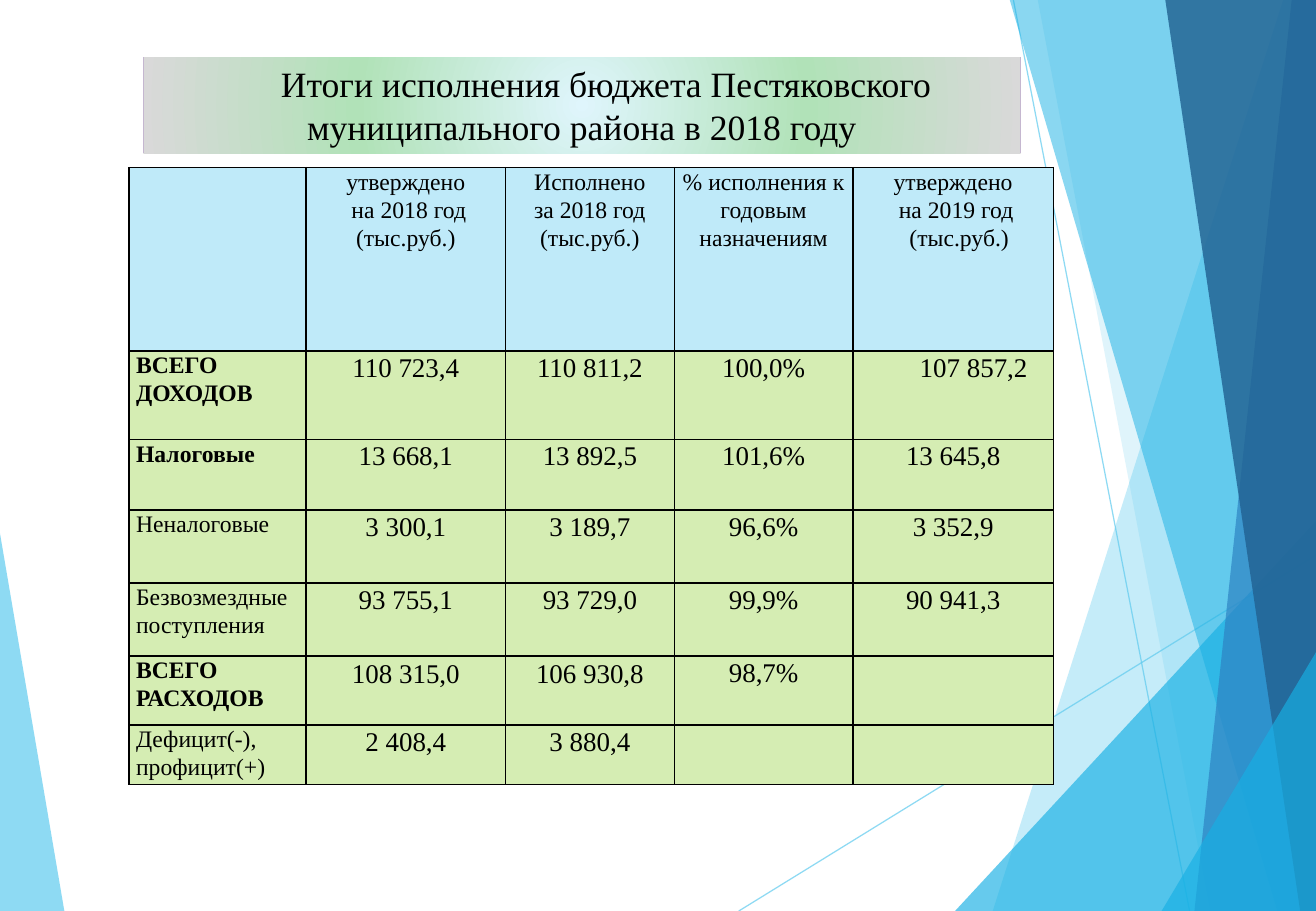
"""Build the slide with the 2018 budget results of the Pestyaki district."""
import pptx
import pptx.dml.color
import pptx.enum.shapes
import pptx.enum.text
import pptx.oxml
import pptx.oxml.ns
import pptx.oxml.xmlchemy
import pptx.util

RGBColor = pptx.dml.color.RGBColor
ALIGN = pptx.enum.text.PP_ALIGN
SKY = RGBColor(0x5F, 0xCB, 0xEF)
AZURE = RGBColor(0x17, 0xB0, 0xE4)
BLUE = RGBColor(0x2E, 0x83, 0xC3)
NAVY = RGBColor(0x22, 0x62, 0x92)
BLACK = RGBColor(0x00, 0x00, 0x00)
HEADER_BLUE = RGBColor(0xBF, 0xEA, 0xF9)
ROW_GREEN = RGBColor(0xD5, 0xED, 0xB3)
TITLE_STOPS = [
    (0, RGBColor(0xDF, 0xF5, 0xFC)),
    (51, RGBColor(0xB1, 0xE2, 0xB8)),
    (100, RGBColor(0xD9, 0xD9, 0xD9)),
    (100, RGBColor(0xC5, 0xEC, 0xFF)),
    (100, RGBColor(0x70, 0x30, 0xA0)),
]
FONT = "Times New Roman"
PX = 9144
WIDTH, HEIGHT = 1083, 750

TITLE = "Итоги исполнения бюджета Пестяковского муниципального района в 2018 году"
TITLE_BOX = (118, 47, 722, 79)
TITLE_INDENT = 40

LEFT_WING = ([(0, 439), (53, HEIGHT), (0, HEIGHT)], SKY, 70)
LINES = [((608, HEIGHT), (WIDTH, 457)), ((834, 0), (979, HEIGHT))]
RIGHT_FACETS = [
    ([(1056, 0), (817, HEIGHT), (WIDTH, HEIGHT), (WIDTH, 0)], SKY, 36),
    ([(854, 0), (996, HEIGHT), (WIDTH, HEIGHT), (WIDTH, 0)], SKY, 20),
    ([(786, HEIGHT), (WIDTH, 429), (WIDTH, HEIGHT)], AZURE, 66),
    ([(831, 0), (1051, HEIGHT), (WIDTH, HEIGHT), (WIDTH, 0)], AZURE, 50),
    ([(1063, 0), (983, HEIGHT), (WIDTH, HEIGHT), (WIDTH, 0)], BLUE, 70),
    ([(959, 0), (1070, HEIGHT), (WIDTH, HEIGHT), (WIDTH, 0)], NAVY, 82),
    ([(956, HEIGHT), (WIDTH, 537), (WIDTH, HEIGHT)], AZURE, 66),
]

TABLE_ORIGIN = (106, 138)
COLUMN_WIDTHS = [146, 164, 139, 147, 165]
ROW_HEIGHTS = [151, 73, 58, 60, 60, 57, 49]
HEADERS = [
    [],
    [("утверждено", 0), ("на 2018 год (тыс.руб.)", 5)],
    [("Исполнено", 0), ("за 2018 год", 0), ("(тыс.руб.)", 0)],
    [("% исполнения к годовым назначениям", 0)],
    [("утверждено", 0), ("на 2019 год", 5), ("(тыс.руб.)", 10)],
]
ROWS = [
    ["ВСЕГО ДОХОДОВ", "110 723,4", "110 811,2", "100,0%", "107 857,2"],
    ["Налоговые", "13 668,1", "13 892,5", "101,6%", "13 645,8"],
    ["Неналоговые", "3 300,1", "3 189,7", "96,6%", "3 352,9"],
    ["Безвозмездные поступления", "93 755,1", "93 729,0", "99,9%", "90 941,3"],
    ["ВСЕГО РАСХОДОВ", "108 315,0", "106 930,8", "98,7%", ""],
    ["Дефицит(-), профицит(+)", "2 408,4", "3 880,4", "", ""],
]
BOLD_LABELS = {"ВСЕГО ДОХОДОВ", "Налоговые", "ВСЕГО РАСХОДОВ"}
INDENTED_VALUES = {"107 857,2": 49}
TIGHT_VALUES = {"108 315,0", "106 930,8"}


def set_attributes(target, values):
    for name, value in values.items():
        setattr(target, name, value)


def set_opacity(shape, percent):
    for color in shape.element.spPr.iter(pptx.oxml.ns.qn("a:srgbClr")):
        alpha = pptx.oxml.xmlchemy.OxmlElement("a:alpha")
        alpha.set("val", str(percent * 1000))
        color.append(alpha)


def add_facet(slide, points, color, opacity):
    builder = slide.shapes.build_freeform(*points[0], scale=PX)
    builder.add_line_segments(points[1:], close=True)
    shape = builder.convert_to_shape()
    shape.shadow.inherit = False
    shape.fill.solid()
    shape.fill.fore_color.rgb = color
    shape.line.fill.background()
    set_opacity(shape, opacity)


def add_thin_line(slide, start, end):
    ends = [value * PX for value in (*start, *end)]
    connector = slide.shapes.add_connector(pptx.enum.shapes.MSO_CONNECTOR.STRAIGHT, *ends)
    connector.line.color.rgb = SKY
    connector.line.width = pptx.util.Pt(0.75)
    connector._element.spPr.append(pptx.oxml.xmlchemy.OxmlElement("a:effectLst"))
    set_opacity(connector, 70)


def write_paragraph(paragraph, text, size, alignment, indent=0, bold=False):
    paragraph.text = text
    paragraph.alignment = alignment
    if indent:
        paragraph._p.get_or_add_pPr().set("indent", str(indent * PX))
    set_attributes(paragraph.font, {"name": FONT, "size": pptx.util.Pt(size), "bold": bold})
    paragraph.font.color.rgb = BLACK


def add_title(slide):
    box = [value * PX for value in TITLE_BOX]
    shape = slide.shapes.add_shape(pptx.enum.shapes.MSO_SHAPE.RECTANGLE, *box)
    shape.shadow.inherit = False
    shape.line.fill.background()
    shape.fill.gradient()
    stops = "".join(
        f'<a:gs pos="{position * 1000}"><a:srgbClr val="{color}"/></a:gs>'
        for position, color in TITLE_STOPS
    )
    gradient = pptx.oxml.parse_xml(
        f'<a:gradFill {pptx.oxml.ns.nsdecls("a")}><a:gsLst>{stops}</a:gsLst>'
        '<a:path path="circle"><a:fillToRect l="50000" t="50000" r="50000" b="50000"/></a:path>'
        "</a:gradFill>"
    )
    properties = shape.element.spPr
    properties.replace(properties.find(pptx.oxml.ns.qn("a:gradFill")), gradient)
    set_attributes(shape.text_frame, {
        "word_wrap": True, "vertical_anchor": pptx.enum.text.MSO_ANCHOR.MIDDLE,
        "margin_left": 8 * PX, "margin_right": 8 * PX,
        "margin_top": 4 * PX, "margin_bottom": 4 * PX,
    })
    write_paragraph(shape.text_frame.paragraphs[0], TITLE, 21.1, ALIGN.CENTER, TITLE_INDENT)


def format_cell(cell, color, tight):
    side = 1 if tight else 6
    set_attributes(cell, {
        "margin_left": side * PX, "margin_right": side * PX,
        "margin_top": int(tight) * PX, "margin_bottom": 0,
    })
    for edge in ("lnL", "lnR", "lnT", "lnB"):
        cell._tc.get_or_add_tcPr().append(pptx.oxml.parse_xml(
            f'<a:{edge} {pptx.oxml.ns.nsdecls("a")} w="12700"><a:solidFill>'
            f'<a:srgbClr val="{BLACK}"/></a:solidFill></a:{edge}>'
        ))
    cell.fill.solid()
    cell.fill.fore_color.rgb = color


def fill_cell(cell, lines, size, alignment, bold):
    for index, (text, indent) in enumerate(lines):
        frame = cell.text_frame
        paragraph = frame.add_paragraph() if index else frame.paragraphs[0]
        write_paragraph(paragraph, text, size, alignment, indent, bold)
        paragraph.line_spacing = 1.07


def add_budget_table(slide):
    extent = (*TABLE_ORIGIN, sum(COLUMN_WIDTHS), sum(ROW_HEIGHTS))
    frame = slide.shapes.add_table(
        len(ROW_HEIGHTS), len(COLUMN_WIDTHS), *[value * PX for value in extent]
    )
    table = frame.table
    set_attributes(table, {"first_row": False, "horz_banding": False})
    for column, width in zip(table.columns, COLUMN_WIDTHS):
        column.width = width * PX
    for row, height in zip(table.rows, ROW_HEIGHTS):
        row.height = height * PX
    for column, lines in enumerate(HEADERS):
        cell = table.cell(0, column)
        format_cell(cell, HEADER_BLUE, False)
        fill_cell(cell, lines, 14, ALIGN.CENTER, False)
    for row, texts in enumerate(ROWS, 1):
        for column, text in enumerate(texts):
            cell = table.cell(row, column)
            format_cell(cell, ROW_GREEN, text in TIGHT_VALUES)
            indent = INDENTED_VALUES.get(text, 0)
            alignment = ALIGN.LEFT if column == 0 or indent else ALIGN.CENTER
            lines = [(text, indent)] if text else []
            fill_cell(cell, lines, 16 if column else 14, alignment, text in BOLD_LABELS)


def main():
    presentation = pptx.Presentation()
    set_attributes(presentation, {"slide_width": WIDTH * PX, "slide_height": HEIGHT * PX})
    slide = presentation.slides.add_slide(presentation.slide_layouts[6])
    add_facet(slide, *LEFT_WING)
    for start, end in LINES:
        add_thin_line(slide, start, end)
    for facet in RIGHT_FACETS:
        add_facet(slide, *facet)
    add_budget_table(slide)
    add_title(slide)
    presentation.save("out.pptx")


if __name__ == "__main__":
    main()
